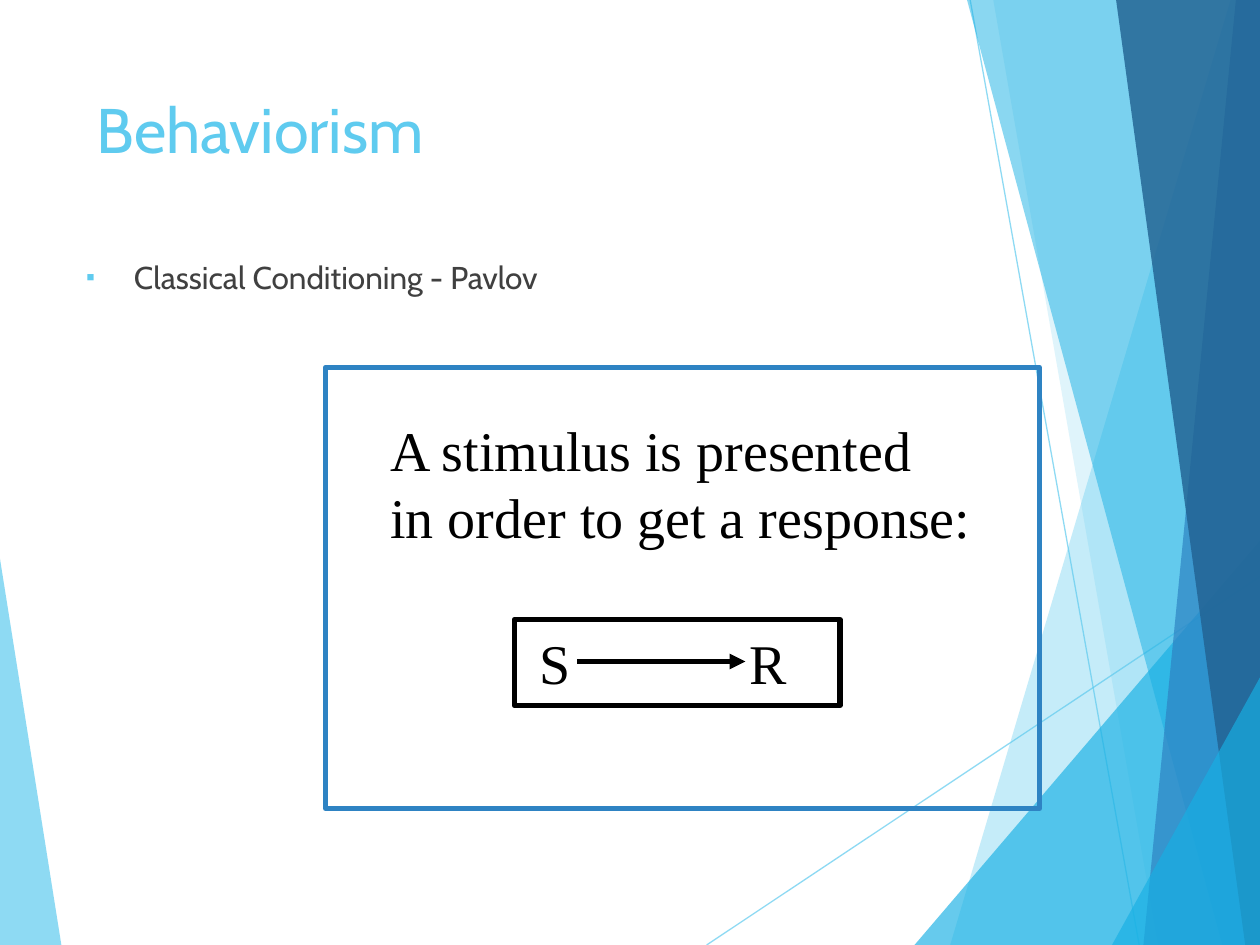
from pptx import Presentation
from pptx.dml.color import RGBColor
from pptx.enum.shapes import MSO_CONNECTOR, MSO_SHAPE
from pptx.enum.text import MSO_ANCHOR, MSO_AUTO_SIZE, PP_ALIGN
from pptx.oxml.ns import qn
from pptx.util import Inches, Pt
from lxml.etree import SubElement

SKY = RGBColor(0x5F, 0xCB, 0xEF)
CYAN = RGBColor(0x17, 0xB0, 0xE4)
BLUE = RGBColor(0x2E, 0x83, 0xC3)
NAVY = RGBColor(0x22, 0x62, 0x92)
GREY = RGBColor(0x40, 0x40, 0x40)
BLACK = RGBColor(0, 0, 0)
COLS, ROWS = 120, 90


class Deck:
    """Style and current slide; lengths are cells of a 120 by 90 grid."""

    sans, serif = "Cabin", "Times New Roman"

    def __init__(self):
        self.prs = Presentation()
        self.prs.slide_width, self.prs.slide_height = Inches(10), Inches(7.5)
        self.cell = self.prs.slide_width / COLS
        self.s = self.prs.slides.add_slide(self.prs.slide_layouts[1])

    def emu(self, *cells):
        return [round(c * self.cell) for c in cells]

    def fade(self, sp, opacity):
        color = sp._element.spPr.find(".//" + qn("a:srgbClr"))
        SubElement(color, qn("a:alpha"), val=str(opacity * 1000))

    def facet(self, points, color, opacity):
        start, *rest = [self.emu(*pt) for pt in points]
        builder = self.s.shapes.build_freeform(*start)
        builder.add_line_segments(rest, close=True)
        sp = builder.convert_to_shape()
        sp.shadow.inherit = False
        sp.fill.solid()
        sp.fill.fore_color.rgb = color
        sp.line.fill.background()
        self.fade(sp, opacity)

    def line(self, ends, color, width, opacity=100, arrow=False):
        cx = self.s.shapes.add_connector(MSO_CONNECTOR.STRAIGHT, *self.emu(*ends))
        cx.line.color.rgb = color
        cx.line.width = Pt(width)
        if opacity < 100:
            self.fade(cx, opacity)
        if arrow:
            ln = cx._element.spPr.find(qn("a:ln"))
            SubElement(ln, qn("a:tailEnd"), type="triangle")
        SubElement(cx._element.spPr, qn("a:effectLst"))

    def frame(self, box, color):
        sp = self.s.shapes.add_shape(MSO_SHAPE.RECTANGLE, *self.emu(*box))
        sp.shadow.inherit = False
        sp.fill.background()
        sp.line.color.rgb = color
        sp.line.width = Pt(3)
        return sp

    def set_text(self, sp, text, font, size, color, anchor=MSO_ANCHOR.TOP):
        tf = sp.text_frame
        tf.text = text
        tf.word_wrap = True
        tf.auto_size = MSO_AUTO_SIZE.NONE
        tf.vertical_anchor = anchor
        for p in tf.paragraphs:
            p.alignment = PP_ALIGN.LEFT
            for r in p.runs:
                r.font.name, r.font.size = font, Pt(size)
                r.font.color.rgb = color
        return tf

    def placeholder(self, idx, box, text, size, color):
        """Fill a template placeholder and bring it in front of the facets."""
        sp = self.s.placeholders[idx]
        sp.left, sp.top, sp.width, sp.height = self.emu(*box)
        sp._element.getparent().append(sp._element)
        return self.set_text(sp, text, self.sans, size, color)

    def bullet(self, p, char, color):
        p.space_before = Pt(10)
        pPr = p._p.get_or_add_pPr()
        pPr.set("marL", str(Inches(0.38)))
        pPr.set("indent", str(-Inches(0.38)))
        SubElement(SubElement(pPr, qn("a:buClr")), qn("a:srgbClr"), val=str(color))
        SubElement(pPr, qn("a:buSzPct"), val="80000")
        SubElement(pPr, qn("a:buChar"), char=char)

    def tab_stop(self, p, cells):
        tabs = SubElement(p._p.get_or_add_pPr(), qn("a:tabLst"))
        SubElement(tabs, qn("a:tab"), pos=str(self.emu(cells)[0]), algn="l")

    def text_box(self, box, text, size, color):
        sp = self.s.shapes.add_textbox(*self.emu(*box))
        self.set_text(sp, text, self.serif, size, color)


def band(top, bottom):
    """Full-height area from a slanted edge to the right side."""
    return [(top, 0), (bottom, ROWS), (COLS, ROWS), (COLS, 0)]


def corner(left, top):
    """Triangle in the lower right corner."""
    return [(left, ROWS), (COLS, top), (COLS, ROWS)]


def main():
    d = Deck()

    d.facet([(0, 53.2), (5.85, ROWS), (0, ROWS)], SKY, 70)
    for ends in ((67.3, ROWS, COLS, 54.9), (92.4, 0, 108.5, ROWS)):
        d.line(ends, SKY, 0.75, opacity=70)
    for points, color, opacity in (
        (band(117.2, 90.5), SKY, 36),
        (band(94.6, 110.3), SKY, 20),
        (corner(87.1, 51.5), CYAN, 66),
        (band(92.1, 116.4), CYAN, 50),
        (band(117.7, 108.9), BLUE, 70),
        (band(106.3, 118.6), NAVY, 82),
        (corner(105.9, 64.5), CYAN, 66),
    ):
        d.facet(points, color, opacity)

    d.placeholder(0, (8, 8, 83.3, 17.3), "Behaviorism", 36, SKY)
    body = d.placeholder(1, (7, 24, 107, 10.8),
                         "Classical Conditioning - Pavlov", 18, GREY)
    d.bullet(body.paragraphs[0], "▪", SKY)

    model = d.frame((49, 59, 31, 8.2), BLACK)
    tf = d.set_text(model, "S\tR", d.serif, 32, BLACK, MSO_ANCHOR.MIDDLE)
    tf.margin_left = Inches(0.2)
    d.tab_stop(tf.paragraphs[0], 20)
    d.line((55, 63, 71, 63), BLACK, 3, arrow=True)

    d.frame((31, 35, 68, 42), BLUE)
    d.text_box((36, 39, 58, 14),
               "A stimulus is presented\nin order to get a response:", 32, BLACK)

    d.prs.save("out.pptx")


if __name__ == "__main__":
    main()
